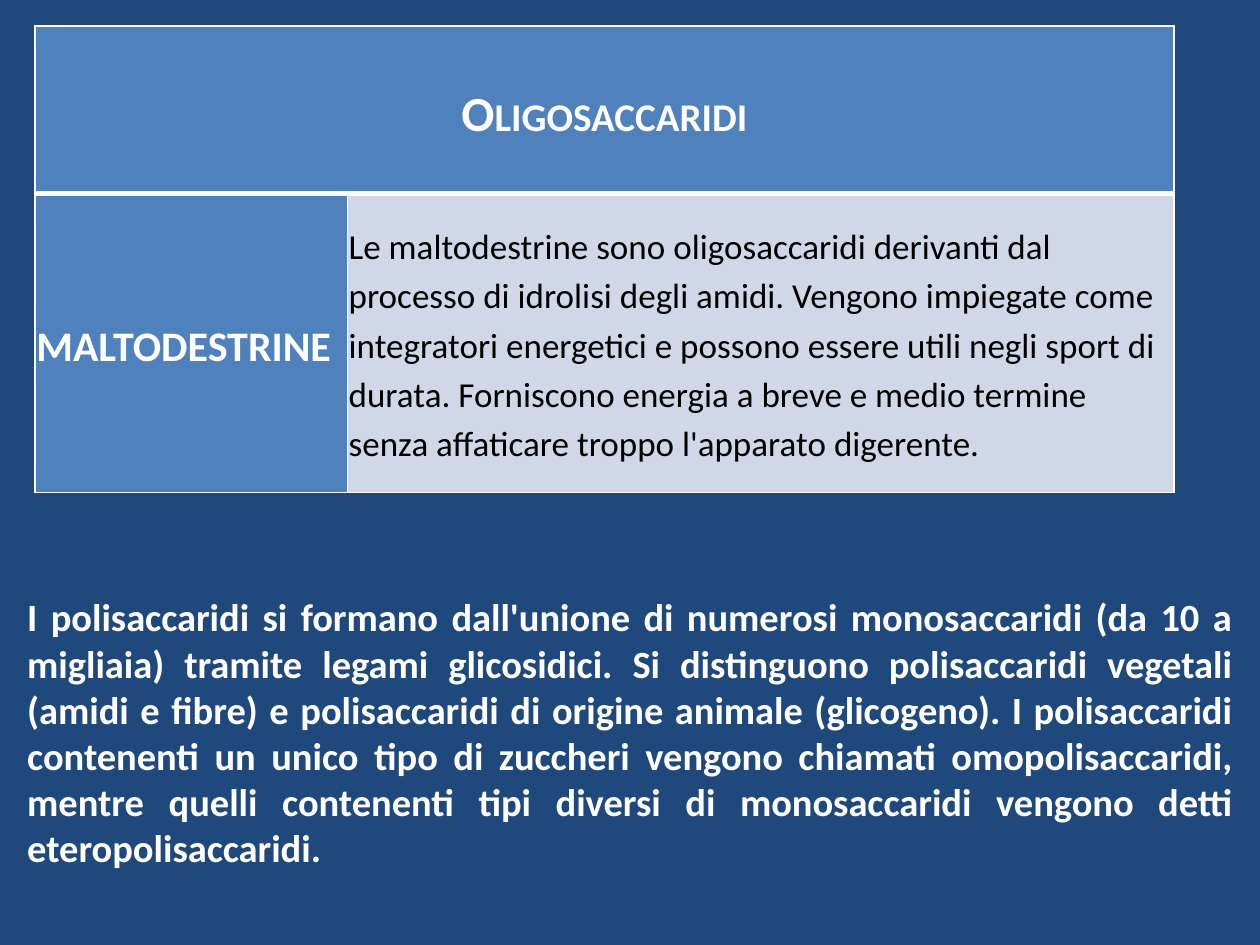
import pptx
import pptx.util
import pptx.dml.color
import pptx.enum.text
import pptx.oxml
import pptx.oxml.ns
from lxml import etree

Pt = pptx.util.Pt
ALIGN = pptx.enum.text.PP_ALIGN
WHITE, BLUE, PALE, NAVY = "FFFFFF", "4F81BD", "D0D8E8", "1F497D"

MALTODEXTRINS = (
    "Le maltodestrine sono oligosaccaridi derivanti dal processo di idrolisi degli amidi. "
    "Vengono impiegate come integratori energetici e possono essere utili negli sport di durata. "
    "Forniscono energia a breve e medio termine senza affaticare troppo l'apparato digerente.")
POLYSACCHARIDES = (
    "I polisaccaridi si formano dall'unione di numerosi monosaccaridi (da 10 a migliaia) "
    "tramite legami glicosidici. Si distinguono polisaccaridi vegetali (amidi e fibre) e "
    "polisaccaridi di origine animale (glicogeno). I polisaccaridi contenenti un unico tipo di "
    "zuccheri vengono chiamati omopolisaccaridi, mentre quelli contenenti tipi diversi di "
    "monosaccaridi vengono detti eteropolisaccaridi.")


def rgb(value):
    return pptx.dml.color.RGBColor.from_string(value)


def write(tf, text, size, color=WHITE, bold=True, align=ALIGN.LEFT):
    tf.text = text
    p = tf.paragraphs[0]
    p.alignment = align
    r = p.runs[0]
    r.font.name, r.font.size, r.font.bold = "Calibri", Pt(size), bold
    r.font.color.rgb = rgb(color)
    return p


def style_cell(cell, fill, widths):
    """Fill a cell and draw its left, right, top and bottom borders."""
    cell.fill.solid()
    cell.fill.fore_color.rgb = rgb(fill)
    cell.vertical_anchor = pptx.enum.text.MSO_ANCHOR.MIDDLE
    cell.margin_left = cell.margin_right = cell.margin_top = cell.margin_bottom = Pt(0.75)
    tc_pr = cell._tc.get_or_add_tcPr()
    for i, (side, width) in enumerate(zip("LRTB", widths)):
        ln = etree.Element(pptx.oxml.ns.qn(f"a:ln{side}"), w=str(Pt(width)))
        solid = etree.SubElement(ln, pptx.oxml.ns.qn("a:solidFill"))
        etree.SubElement(solid, pptx.oxml.ns.qn("a:srgbClr"), val=WHITE)
        tc_pr.insert(i, ln)


def add_sugar_table(s, left, top, width, height):
    table = s.shapes.add_table(2, 2, left, top, width, height).table
    table.columns[0].width = Pt(178.5)
    table.columns[1].width = width - Pt(178.5)
    table.rows[0].height = Pt(95.5)
    table.rows[1].height = height - Pt(95.5)
    title, label, body = table.cell(0, 0), table.cell(1, 0), table.cell(1, 1)
    title.merge(table.cell(0, 1))

    # A thick rule separates the header from the row below
    for cell in table.rows[0].cells:
        style_cell(cell, BLUE, (1, 1, 1, 3))
    for cell, fill in ((label, BLUE), (body, PALE)):
        style_cell(cell, fill, (1, 1, 3, 1))

    p = write(title.text_frame, "Oligosaccaridi", 28, align=ALIGN.CENTER)
    p.line_spacing = 1.15
    p.runs[0].font._element.set("cap", "small")
    for p in (write(label.text_frame, "MALTODESTRINE", 24),
              write(body.text_frame, MALTODEXTRINS, 20, "000000", False)):
        p.line_spacing = 1.15
        p.space_after = Pt(10)


def add_paragraph_box(s, left, top, width, height):
    tf = s.shapes.add_textbox(left, top, width, height).text_frame
    tf.word_wrap = True
    tf.auto_size = pptx.enum.text.MSO_AUTO_SIZE.SHAPE_TO_FIT_TEXT
    write(tf, POLYSACCHARIDES, 22, align=ALIGN.JUSTIFY)


def main():
    prs = pptx.Presentation()
    prs.slide_width, prs.slide_height = Pt(720), Pt(540)
    s = prs.slides.add_slide(prs.slide_layouts[6])
    s.background.fill.solid()
    s.background.fill.fore_color.rgb = rgb(NAVY)

    # Table above, explanation below
    add_sugar_table(s, Pt(20), Pt(15), Pt(651), Pt(266.5))
    add_paragraph_box(s, Pt(8.5), Pt(335.5), Pt(703), Pt(167))
    prs.save("out.pptx")


if __name__ == "__main__":
    main()
